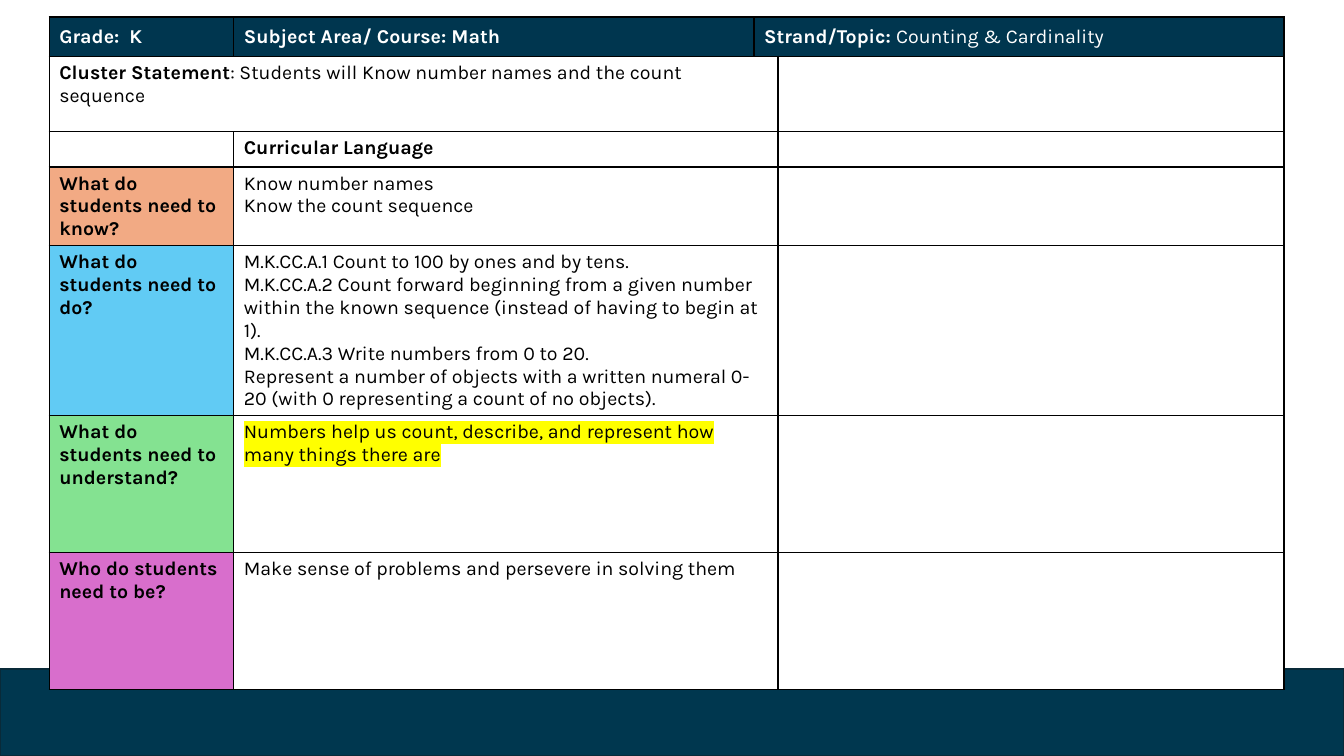
from lxml import etree
from pptx import Presentation
from pptx.dml.color import RGBColor
from pptx.enum.shapes import MSO_SHAPE
from pptx.enum.text import MSO_ANCHOR
from pptx.oxml.ns import qn
from pptx.util import Cm, Pt

RECTANGLE = MSO_SHAPE.RECTANGLE
MIDDLE = MSO_ANCHOR.MIDDLE
TOP = MSO_ANCHOR.TOP

THEME = {
    "font": "Karla", "size": 14, "border": 1,
    "black": "000000", "white": "FFFFFF", "highlight": "FFFF00",
    "header": "00364F", "band": "00374F", "band_line": "092A39",
    "know": "F2AA84", "do": "61CBF4", "understand": "84E291", "be": "D86ECC",
}


def color(name):
    return RGBColor.from_string(THEME[name])


def fill_cell(cell, paragraphs, fill="white", ink="black", highlight=False):
    """Write paragraphs, each a list of (text, bold), into a bordered cell."""
    properties = cell._tc.get_or_add_tcPr()
    for side in ("a:lnL", "a:lnR", "a:lnT", "a:lnB"):
        line = etree.SubElement(properties, qn(side), w=str(Pt(THEME["border"])))
        solid = etree.SubElement(line, qn("a:solidFill"))
        etree.SubElement(solid, qn("a:srgbClr"), val=THEME["black"])
    cell.fill.solid()
    cell.fill.fore_color.rgb = color(fill)
    frame = cell.text_frame
    for index, spans in enumerate(paragraphs):
        para = frame.add_paragraph() if index else frame.paragraphs[0]
        for text, bold in spans:
            span = para.add_run()
            span.text = text
            span.font.size = Pt(THEME["size"])
            span.font.bold = bold
            span.font.color.rgb = color(ink)
            span.font.name = THEME["font"]
            if highlight:
                mark = etree.Element(qn("a:highlight"))
                etree.SubElement(mark, qn("a:srgbClr"), val=THEME["highlight"])
                span._r.rPr.find(qn("a:solidFill")).addnext(mark)
    # An empty cell keeps the table's type size so that its row stays low
    if not paragraphs:
        end = etree.SubElement(frame.paragraphs[0]._p, qn("a:endParaRPr"),
                               sz=str(THEME["size"] * 100))
        etree.SubElement(end, qn("a:latin"), typeface=THEME["font"])


deck = Presentation()
deck.slide_width, deck.slide_height = Cm(33.87), Cm(19.05)
page = deck.slides.add_slide(deck.slide_layouts[6])

# Footer band
band = page.shapes.add_shape(RECTANGLE, 0, Cm(16.87), deck.slide_width, Cm(2.18))
band.shadow.inherit = False
band.fill.solid()
band.fill.fore_color.rgb = color("band")
band.line.color.rgb = color("band_line")
band.line.width = Pt(1.5)

# Table grid
widths = [4.65, 13.11, 0.38, 12.75]
heights = [0.99, 1.9, 0.89, 1.09, 3.45, 3.45, 3.45]
table = page.shapes.add_table(len(heights), len(widths), Cm(1.24), Cm(0.43),
                              Cm(sum(widths)), Cm(sum(heights))).table
table.first_row = table.horz_banding = False
for column, width in zip(table.columns, widths):
    column.width = Cm(width)
for row, height in zip(table.rows, heights):
    row.height = Cm(height)

# Merged cells: header topic, cluster statement, curricular language
table.cell(0, 2).merge(table.cell(0, 3))
table.cell(1, 0).merge(table.cell(1, 2))
for row in range(2, len(heights)):
    table.cell(row, 1).merge(table.cell(row, 2))

# Header row
header = [
    [[("Grade:  K", True)]],
    [[("Subject Area/ Course: Math", True)]],
    [[("Strand/Topic: ", True), ("Counting & Cardinality", False)]],
    [],
]
for column, paragraphs in enumerate(header):
    fill_cell(table.cell(0, column), paragraphs, "header", "white")
    table.cell(0, column).vertical_anchor = MIDDLE

# Planning rows: first cell, second cell, fill of the first cell
cluster = [[("Cluster Statement", True),
            (": Students will Know number names and the count sequence", False)]]
standards = [
    "M.K.CC.A.1 Count to 100 by ones and by tens.",
    "M.K.CC.A.2 Count forward beginning from a given number within the known "
    "sequence (instead of having to begin at 1).",
    "M.K.CC.A.3 Write numbers from 0 to 20.",
    "Represent a number of objects with a written numeral 0-20 "
    "(with 0 representing a count of no objects).",
]
questions = [
    ("What do students need to know?", "know",
     ["Know number names", "Know the count sequence"]),
    ("What do students need to do?", "do", standards),
    ("What do students need to understand?", "understand",
     ["Numbers help us count, describe, and represent how many things there are"]),
    ("Who do students need to be?", "be",
     ["Make sense of problems and persevere in solving them"]),
]
planning = [(cluster, [], "white"), ([], [[("Curricular Language", True)]], "white")]
for question, fill, answers in questions:
    planning.append(([[(question, True)]], [[(answer, False)] for answer in answers], fill))

for row, (first, second, fill) in enumerate(planning, start=1):
    fill_cell(table.cell(row, 0), first, fill)
    fill_cell(table.cell(row, 1), second, highlight=fill == "understand")
    for column in (2, 3):
        fill_cell(table.cell(row, column), [])
    for column in range(len(widths)):
        table.cell(row, column).vertical_anchor = TOP

deck.save("out.pptx")
